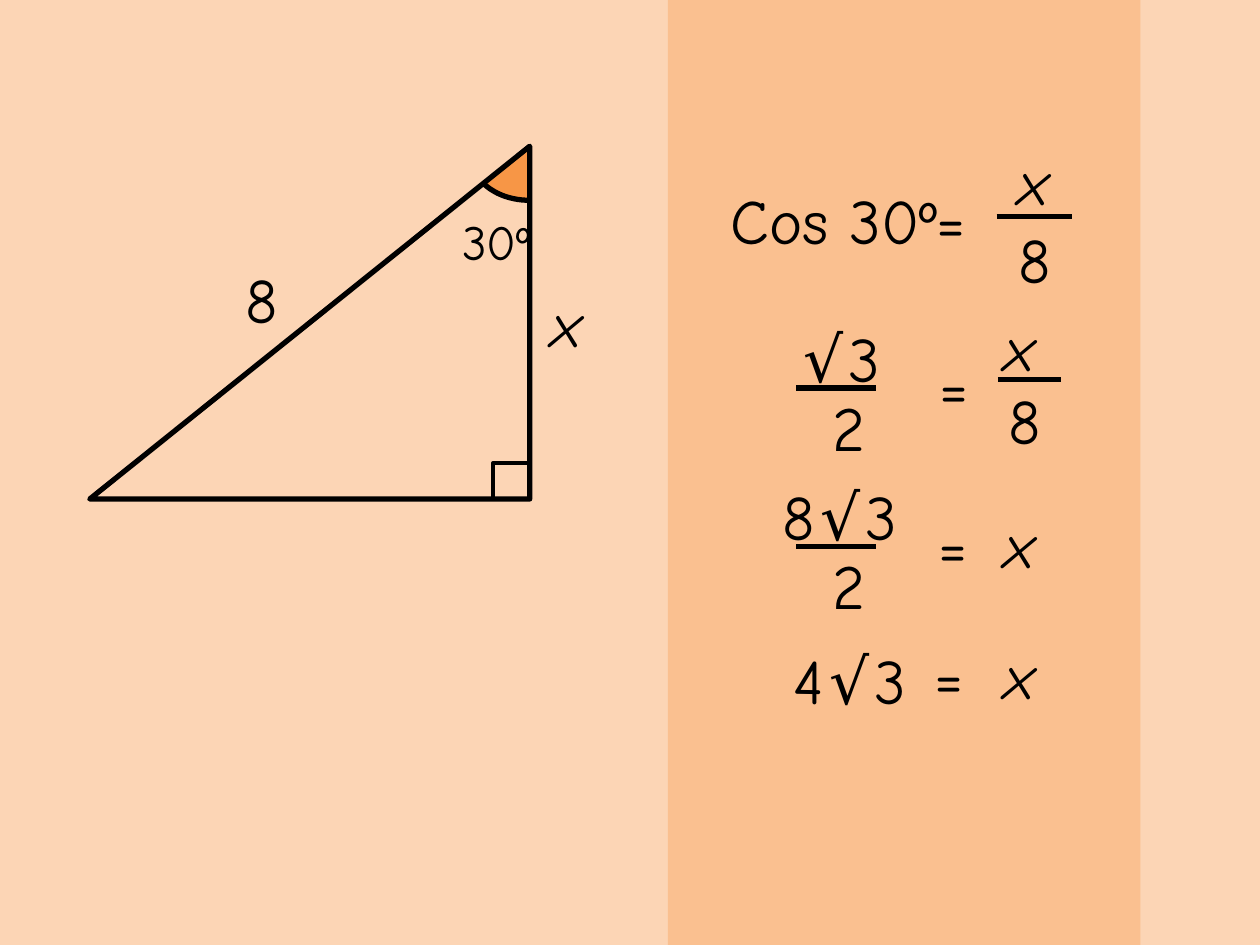
from lxml.etree import SubElement
from pptx import Presentation
from pptx.dml.color import RGBColor as RGB
from pptx.enum.shapes import MSO_CONNECTOR as CONN, MSO_SHAPE as SHAPE
from pptx.enum.text import MSO_AUTO_SIZE as AUTO, PP_ALIGN as ALIGN
from pptx.oxml.ns import qn
from pptx.util import Pt

THEME = dict(font="Comic Neue", ink=RGB(0, 0, 0), back=RGB(0xFC, 0xD5, 0xB5),
             panel=RGB(0xFA, 0xC0, 0x90), angle=RGB(0xF7, 0x96, 0x46),
             text=36, small=28, line=3, thin=2.25)
L, C = ALIGN.LEFT, ALIGN.CENTER

# Triangle labels: text, left, top, width, align
SIDE_LABELS = [("x", 308.2, 159.1, 38.2, L), ("8", 133.2, 145.4, 90.7, L)]
ANGLE_LABEL = ("30º", 257, 117.4, 90.7, L)

# Working steps: labels as above, bars as left, right, y
STEPS = [
    dict(labels=[("Cos 30º", 410.4, 100.1, 158.4, L), ("=", 527.8, 100.1, 61.9, L),
                 (" x", 541.4, 77.8, 86.4, C), ("8", 552.2, 122.4, 77.8, C)],
         bars=[(569.5, 612.7, 123.8)]),
    dict(labels=[(" √3", 428.4, 179.3, 90.7, C), (" 2", 456.5, 218.2, 45.4, L),
                 ("=", 519.8, 195.1, 51.1, C), (" x", 540.7, 172.8, 71.3, C),
                 ("8", 553.7, 214.6, 64.1, C)],
         bars=[(455, 500.4, 221.8), (570.2, 606.2, 216.7)]),
    dict(labels=[("8√3", 434.9, 269.3, 90.7, C), (" 2", 456.5, 308.9, 45.4, L),
                 ("=", 519.1, 285.8, 51.1, C), (" x", 540.7, 285.1, 71.3, C)],
         bars=[(455, 500.4, 312.5)]),
    dict(labels=[("4√3", 446.4, 362.9, 90.7, L), ("=", 517, 360.7, 51.1, C),
                 (" x", 540.7, 360, 71.3, C)],
         bars=[]),
]

# Angle mark: apex and the Bezier control points of its arc
APEX = (303.1, 85)
ARC = [(303.1, 114.5), (293, 114.5), (283.7, 111.6), (276.5, 105.1)]


def style(sp, fill=None, line=None):
    sp.shadow.inherit = False
    if fill is None:
        sp.fill.background()
    else:
        sp.fill.solid()
        sp.fill.fore_color.rgb = fill
    if line is None:
        sp.line.fill.background()
    else:
        sp.line.color.rgb = THEME["ink"]
        sp.line.width = Pt(line)


def add_shape(shapes, kind, x, y, w, h, **look):
    sp = shapes.add_shape(kind, Pt(x), Pt(y), Pt(w), Pt(h))
    style(sp, **look)
    return sp


def add_label(shapes, text, x, y, w, align, size=THEME["text"]):
    tf = shapes.add_textbox(Pt(x), Pt(y), Pt(w), Pt(size * 1.42)).text_frame
    tf.word_wrap = True
    tf.auto_size = AUTO.SHAPE_TO_FIT_TEXT
    p = tf.paragraphs[0]
    p.alignment = align
    before = SubElement(p._p.get_or_add_pPr(), qn("a:spcBef"))
    SubElement(before, qn("a:spcPct")).set("val", "50000")
    p.font.name, p.font.size = THEME["font"], Pt(size)
    p.font.color.rgb = THEME["ink"]
    # The unknown is italic, the space before it upright
    for part in ([" ", "x"] if text == " x" else [text]):
        r = p.add_run()
        r.text = part
        r.font.name, r.font.size = THEME["font"], Pt(size)
        r.font.color.rgb = THEME["ink"]
        if part == "x":
            r.font.italic = True
        if "√" in part:
            r.font._element.set("spc", "300")


def add_bar(shapes, left, right, y):
    line = shapes.add_connector(CONN.STRAIGHT, Pt(left), Pt(y), Pt(right), Pt(y))
    line.line.color.rgb = THEME["ink"]
    line.line.width = Pt(THEME["line"])
    SubElement(line._element.spPr, qn("a:effectLst"))


def bezier(points, t):
    weights = [(1 - t) ** 3, 3 * t * (1 - t) ** 2, 3 * t * t * (1 - t), t ** 3]
    return tuple(sum(k * pt[i] for k, pt in zip(weights, points)) for i in (0, 1))


def add_outline(shapes, points, close, **look):
    points = [(Pt(x), Pt(y)) for x, y in points]
    builder = shapes.build_freeform(*points[0])
    builder.add_line_segments(points[1:], close=close)
    style(builder.convert_to_shape(), **look)


prs = Presentation()
prs.slide_width, prs.slide_height = Pt(720), Pt(540)
s = prs.slides.add_slide(prs.slide_layouts[6])
s.background.fill.solid()
s.background.fill.fore_color.rgb = THEME["back"]

# Panel behind the working
add_shape(s.shapes, SHAPE.RECTANGLE, 381.6, 0, 270, 540, fill=THEME["panel"])

# Triangle with its angle mark, right-angle mark and labels
figure = s.shapes.add_group_shape().shapes
arc = [bezier(ARC, i / 12) for i in range(13)]
add_outline(figure, arc + [APEX], True, fill=THEME["angle"])
add_outline(figure, arc, False, line=THEME["line"])
add_label(figure, *ANGLE_LABEL, size=THEME["small"])
triangle = add_shape(figure, SHAPE.RIGHT_TRIANGLE, 51.3, 83.6, 251.4, 201.6,
                     line=THEME["line"])
triangle._element.spPr.get_or_add_xfrm().set("flipH", "1")
add_shape(figure, SHAPE.RECTANGLE, 281.7, 264.7, 21.4, 20.7, line=THEME["thin"])
for label in SIDE_LABELS:
    add_label(figure, *label)

# Working, one group for each step
for step in STEPS:
    group = s.shapes.add_group_shape().shapes
    for label in step["labels"]:
        add_label(group, *label)
    for bar in step["bars"]:
        add_bar(group, *bar)

prs.save("out.pptx")
